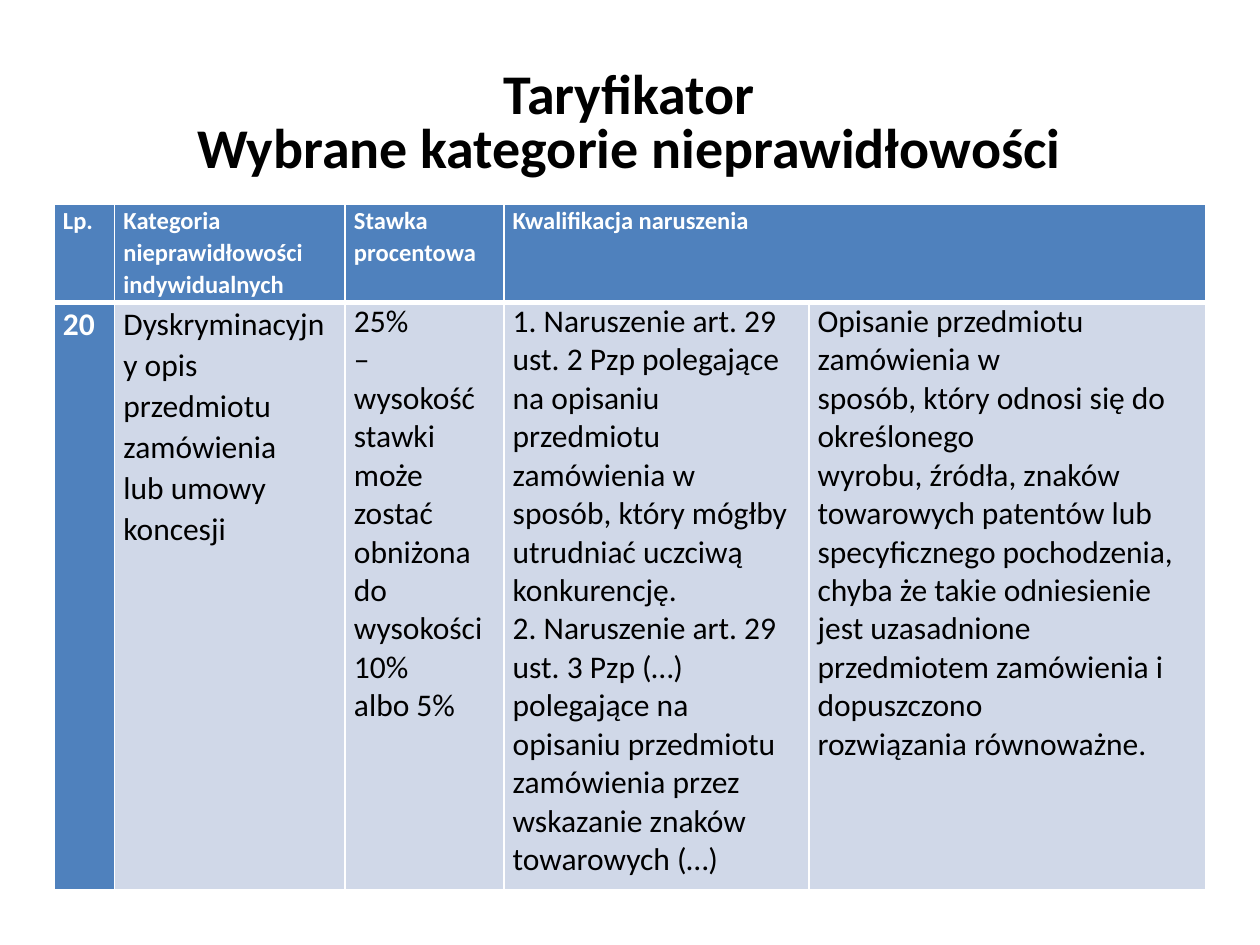
from dataclasses import dataclass

from lxml import etree
from pptx import Presentation
from pptx import util as u
from pptx.dml.color import RGBColor
from pptx.enum import text
from pptx.oxml.ns import qn


@dataclass(frozen=True)
class Theme:
    font: str = "Calibri"
    black: str = "000000"
    white: str = "FFFFFF"
    accent: str = "4F81BD"
    band: str = "D0D8E8"
    title_size: int = 32
    header_size: int = 14
    body_size: int = 18
    thin_line: int = 1
    thick_line: int = 3


THEME = Theme()


@dataclass(frozen=True)
class Entry:
    """Content and look of one table cell."""
    lines: tuple[str, ...]
    size: int = THEME.body_size
    color: str = THEME.black
    fill: str = THEME.band
    bold: bool = False
    spacing: float = 1.0
    columns: int = 1


def heading(label: str, size: int = THEME.header_size, columns: int = 1) -> Entry:
    return Entry((label,), size, THEME.white, THEME.accent, True, 1.07, columns)


TITLE = ("Taryfikator", "Wybrane kategorie nieprawidłowości")
COLUMN_WIDTHS = (0.48, 1.83, 1.26, 2.42, 3.15)
ROW_HEIGHTS = (0.78, 4.66)
ROWS = (
    (
        heading("Lp."),
        heading("Kategoria nieprawidłowości indywidualnych"),
        heading("Stawka procentowa"),
        heading("Kwalifikacja naruszenia", columns=2),
    ),
    (
        heading("20", THEME.body_size),
        Entry((
            "Dyskryminacyjny opis",
            "przedmiotu zamówienia",
            "lub umowy koncesji",
        ), spacing=1.07),
        Entry((
            "25%",
            "– wysokość stawki",
            "może zostać obniżona do wysokości 10%",
            "albo 5%",
        )),
        Entry((
            "1. Naruszenie art. 29 ust. 2 Pzp polegające na opisaniu",
            "przedmiotu zamówienia w sposób, który mógłby",
            "utrudniać uczciwą konkurencję.",
            "2. Naruszenie art. 29 ust. 3 Pzp (…)",
            "polegające na opisaniu przedmiotu zamówienia przez",
            "wskazanie znaków towarowych (…)",
        )),
        Entry((
            "Opisanie przedmiotu zamówienia w",
            "sposób, który odnosi się do określonego",
            "wyrobu, źródła, znaków towarowych patentów lub specyficznego pochodzenia,",
            "chyba że takie odniesienie jest uzasadnione",
            "przedmiotem zamówienia i dopuszczono",
            "rozwiązania równoważne.",
        )),
    ),
)


def apply(target, values: dict) -> None:
    for name, value in values.items():
        setattr(target, name, value)


def write(frame, lines: tuple[str, ...], size: int, color: str, bold: bool,
          spacing: float, alignment) -> None:
    frame.text = "\n".join(lines)
    for paragraph in frame.paragraphs:
        apply(paragraph, {"alignment": alignment, "line_spacing": spacing})
        for run in paragraph.runs:
            apply(run.font, {"name": THEME.font, "size": u.Pt(size), "bold": bold})
            run.font.color.rgb = RGBColor.from_string(color)


def draw_borders(cell, widths: dict[str, int]) -> None:
    properties = cell._tc.get_or_add_tcPr()
    for side, width in widths.items():
        line = etree.SubElement(properties, qn(f"a:ln{side}"), w=str(u.Pt(width)))
        fill = etree.SubElement(line, qn("a:solidFill"))
        etree.SubElement(fill, qn("a:srgbClr"), val=THEME.white)


def draw_cell(cell, entry: Entry, top: int, bottom: int) -> None:
    # Borders come before the fill in the cell properties
    draw_borders(cell, {"L": THEME.thin_line, "R": THEME.thin_line,
                        "T": top, "B": bottom})
    cell.fill.solid()
    cell.fill.fore_color.rgb = RGBColor.from_string(entry.fill)
    apply(cell, {"margin_left": u.Inches(0.07), "margin_right": u.Inches(0.07),
                 "margin_top": 0, "margin_bottom": 0,
                 "vertical_anchor": text.MSO_ANCHOR.TOP})
    write(cell.text_frame, entry.lines, entry.size, entry.color, entry.bold,
          entry.spacing, text.PP_ALIGN.LEFT)


def draw_title(slide) -> None:
    title = slide.shapes.title
    apply(title, {"left": u.Inches(0.43), "top": u.Inches(0.52),
                  "width": u.Inches(9.13), "height": u.Inches(3.33)})
    apply(title.text_frame, {"word_wrap": True,
                             "auto_size": text.MSO_AUTO_SIZE.NONE,
                             "vertical_anchor": text.MSO_ANCHOR.TOP})
    write(title.text_frame, TITLE, THEME.title_size, THEME.black, True, 0.8,
          text.PP_ALIGN.CENTER)


def draw_tariff(slide) -> None:
    tariff = slide.shapes.add_table(
        len(ROW_HEIGHTS), len(COLUMN_WIDTHS), u.Inches(0.43), u.Inches(1.62),
        u.Inches(sum(COLUMN_WIDTHS)), u.Inches(sum(ROW_HEIGHTS))).table
    for column, width in zip(tariff.columns, COLUMN_WIDTHS):
        column.width = u.Inches(width)
    for row, height in zip(tariff.rows, ROW_HEIGHTS):
        row.height = u.Inches(height)

    for r, entries in enumerate(ROWS):
        # The thick rule separates the header from the body
        top, bottom = ((THEME.thin_line, THEME.thick_line) if r == 0
                       else (THEME.thick_line, THEME.thin_line))
        for c, entry in enumerate(entries):
            cell = tariff.cell(r, c)
            if entry.columns > 1:
                cell.merge(tariff.cell(r, c + entry.columns - 1))
            draw_cell(cell, entry, top, bottom)


def main() -> None:
    deck = Presentation()
    apply(deck, {"slide_width": u.Inches(10), "slide_height": u.Inches(7.5)})
    slide = deck.slides.add_slide(deck.slide_layouts.get_by_name("Title Only"))
    draw_title(slide)
    draw_tariff(slide)
    deck.save("out.pptx")


if __name__ == "__main__":
    main()
